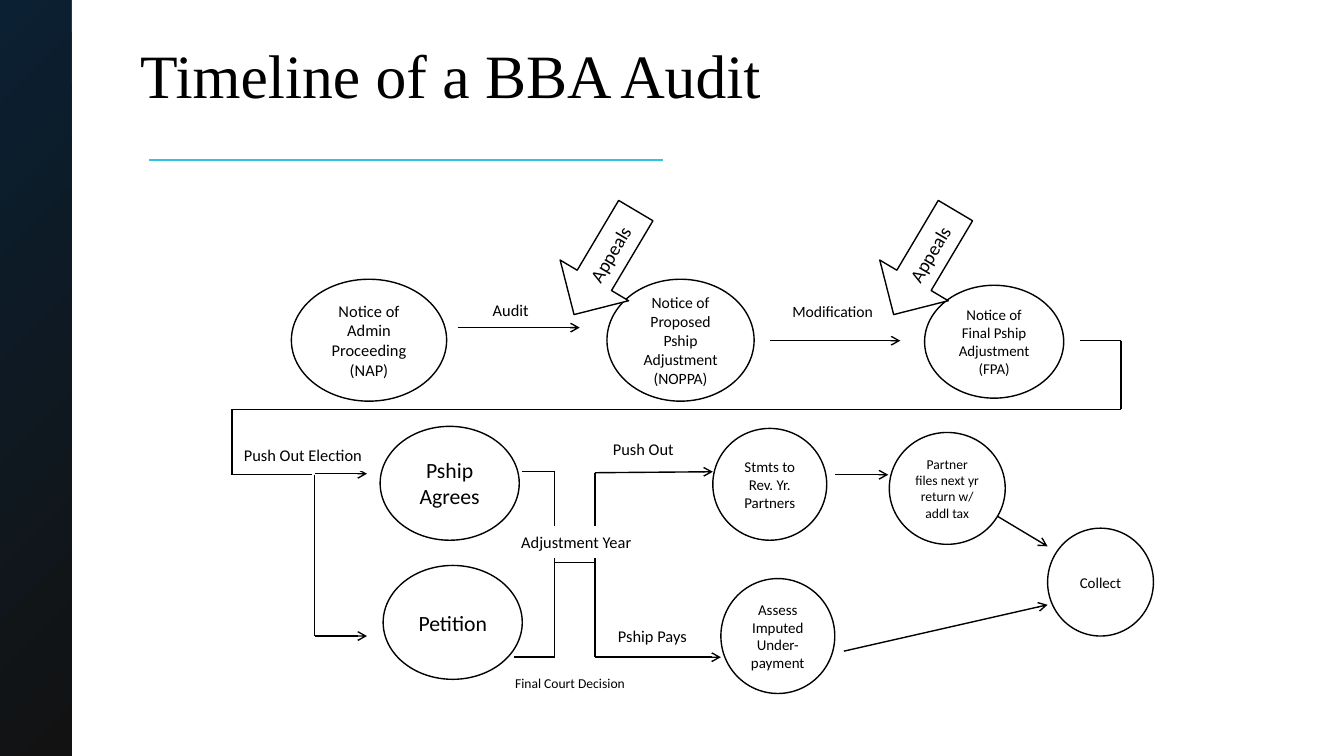
"""Build the slide with the timeline of a BBA audit."""
from dataclasses import dataclass

from lxml import etree
from pptx import Presentation
from pptx.dml.color import RGBColor
from pptx.enum.shapes import MSO_CONNECTOR, MSO_SHAPE
from pptx.enum.text import MSO_ANCHOR, MSO_AUTO_SIZE, PP_ALIGN
from pptx.oxml.ns import qn
from pptx.slide import Slide
from pptx.util import Inches, Pt

BLACK = RGBColor(0x00, 0x00, 0x00)
WHITE = RGBColor(0xFF, 0xFF, 0xFF)
NAVY = RGBColor(0x0B, 0x20, 0x32)
COAL = RGBColor(0x12, 0x12, 0x12)
AQUA = RGBColor(0x30, 0xC3, 0xE5)

OVAL = MSO_SHAPE.OVAL
RECT = MSO_SHAPE.RECTANGLE
ARROW = MSO_SHAPE.LEFT_ARROW
STRAIGHT = MSO_CONNECTOR.STRAIGHT
LEFT, CENTER = PP_ALIGN.LEFT, PP_ALIGN.CENTER
TOP, MIDDLE = MSO_ANCHOR.TOP, MSO_ANCHOR.MIDDLE
FIXED = MSO_AUTO_SIZE.NONE

CELL = 0.1
COLS, ROWS = 133.3, 75
BACK, SPLIT, MERGE, FORK, EDGE = 23, 31.2, 55, 59, 111.2
UPPER, LINK, LOWER = 46.8, 55.8, 65.2

Point = tuple[float, float]


@dataclass(frozen=True)
class Node:
    """A shape with text, placed in columns and rows."""
    text: str
    col: float
    row: float
    width: float
    height: float
    size: float
    form: MSO_SHAPE = OVAL
    line: RGBColor = BLACK
    align: PP_ALIGN = CENTER
    anchor: MSO_ANCHOR = MIDDLE
    pad: float = 0.9
    turn: float = 0


@dataclass(frozen=True)
class Route:
    """A chain of straight lines that may end in an arrowhead."""
    points: tuple[Point, ...]
    arrow: bool = True
    color: RGBColor = BLACK
    weight: float = 1


def label(text: str, col: float, row: float, width: float,
          size: float = 11.7, align: PP_ALIGN = LEFT) -> Node:
    """Describe a plain caption beside a line."""
    return Node(text, col, row, width, 3, size, RECT, WHITE, align, TOP, 1)


def appeal(col: float) -> Node:
    """Describe a tilted arrow for an appeal."""
    return Node("Appeals", col, 22.1, 12, 7.9, 13.6, ARROW, turn=300.7)


ROUTES = (
    Route(((14.8, 15.9), (65.8, 15.9)), False, AQUA, 1.5),
    Route(((45.4, 32.5), (57.5, 32.5))),
    Route(((76.4, 33.8), (89.3, 33.8))),
    Route(((107.1, 33.8), (EDGE, 33.8), (EDGE, 40.6), (BACK, 40.6),
           (BACK, 47.1), (30.9, 47.1)), False),
    Route(((SPLIT, 47), (36.4, 47))),
    Route(((SPLIT, 47.1), (SPLIT, 63.1), (36.4, 63.1))),
    Route(((51.8, UPPER), (MERGE, UPPER), (MERGE, LOWER), (51, LOWER)), False),
    Route(((MERGE, LINK), (FORK, LINK)), False),
    Route(((FORK, LINK), (FORK, 46.9), (70.7, UPPER))),
    Route(((FORK, LINK), (FORK, LOWER), (71.5, LOWER))),
    Route(((82.8, 47.1), (88.1, 47.1))),
    Route(((98.9, 51.2), (103.9, 54.2))),
    Route(((83.7, 64.6), (103.9, 60))),
)

NODES = (
    label("Audit", 46.4, 29.3, 8.5, align=CENTER),
    label("Modification", 77.6, 29.5, 10.5, 11.2),
    label("Push Out Election", 23.2, 43.7, 15.4),
    label("Final Court Decision", 50.1, 66.5, 13.1, 9.7),
    label("Push Out", 59.8, 43.1, 10.1),
    label("Pship Pays", 60.3, 61.6, 9.3),
    label("Adjustment Year", 50.7, 52.3, 13.9),
    Node("Notice of Admin Proceeding (NAP)", 28.9, 27.7, 15.4, 12.1, 11.7),
    Node("Notice of Proposed Pship Adjustment (NOPPA)",
         60.2, 27.7, 14.6, 12.1, 11.2),
    Node("Notice of Final Pship Adjustment (FPA)",
         91.7, 28.3, 13.8, 11.2, 10.7),
    Node("Pship Agrees", 37.7, 42.3, 13.8, 11.3, 15.5),
    Node("Petition", 38, 56.1, 13.8, 11.3, 15.5),
    Node("Stmts to Rev. Yr. Partners", 70.7, 42.5, 11.3, 11.1, 10.7),
    Node("Assess Imputed Under-payment", 71.5, 57.4, 11.3, 11.4, 10.7),
    Node("Partner files next yr return w/ addl tax",
         88.2, 42.9, 11.5, 11.1, 9.7),
    Node("Collect", 103.9, 52.4, 10.5, 10.7, 10.7),
    appeal(54),
    appeal(85.7),
)


def cells(count: float) -> int:
    """Turn a count of grid cells into a length."""
    return Inches(count * CELL)


def write(frame, text: str, size: float, font: str, align: PP_ALIGN) -> None:
    """Write one run of text into a frame."""
    para = frame.paragraphs[0]
    para.alignment = align
    run = para.add_run()
    run.text = text
    run.font.name = font
    run.font.size = Pt(size)
    run.font.color.rgb = BLACK


def draw_strip(slide: Slide) -> None:
    """Draw the dark strip down the left side."""
    strip = slide.shapes.add_shape(RECT, 0, 0, cells(7.1), cells(ROWS))
    strip.shadow.inherit = False
    strip.line.fill.background()
    strip.fill.gradient()
    strip.fill.gradient_angle = 315
    for stop, color in zip(strip.fill.gradient_stops, (NAVY, COAL)):
        stop.color.rgb = color


def draw_title(slide: Slide) -> None:
    """Place and format the title."""
    title = slide.shapes.title
    title.left, title.top = cells(12.9), cells(4)
    title.width, title.height = cells(115), cells(14.5)
    frame = title.text_frame
    frame.auto_size = FIXED
    frame.word_wrap = True
    frame.vertical_anchor = TOP
    write(frame, "Timeline of a BBA Audit", 44, "Times New Roman", LEFT)
    frame.paragraphs[0].line_spacing = 0.9


def draw_route(slide: Slide, route: Route) -> None:
    """Draw each line of a route, with the head on the last."""
    for start, end in zip(route.points, route.points[1:]):
        link = slide.shapes.add_connector(
            STRAIGHT, *(cells(part) for part in start + end))
        link.line.color.rgb = route.color
        link.line.width = Pt(route.weight)
        if route.arrow and end == route.points[-1]:
            outline = link.line.fill._xPr
            etree.SubElement(outline, qn("a:tailEnd"), type="arrow")
        etree.SubElement(link._element.spPr, qn("a:effectLst"))


def draw_node(slide: Slide, node: Node) -> None:
    """Draw a shape and its text."""
    shape = slide.shapes.add_shape(
        node.form, cells(node.col), cells(node.row),
        cells(node.width), cells(node.height))
    shape.rotation = node.turn
    shape.shadow.inherit = False
    shape.fill.solid()
    shape.fill.fore_color.rgb = WHITE
    shape.line.color.rgb = node.line
    shape.line.width = Pt(1)
    frame = shape.text_frame
    frame.word_wrap = True
    frame.vertical_anchor = node.anchor
    frame.margin_left = frame.margin_right = cells(node.pad)
    frame.margin_top = frame.margin_bottom = cells(node.pad / 2)
    write(frame, node.text, node.size, "Calibri", node.align)


def main() -> None:
    """Build and save the deck."""
    deck = Presentation()
    deck.slide_width, deck.slide_height = cells(COLS), cells(ROWS)
    slide = deck.slides.add_slide(deck.slide_layouts[5])
    draw_strip(slide)
    draw_title(slide)
    for route in ROUTES:
        draw_route(slide, route)
    for node in NODES:
        draw_node(slide, node)
    deck.save("out.pptx")


if __name__ == "__main__":
    main()
